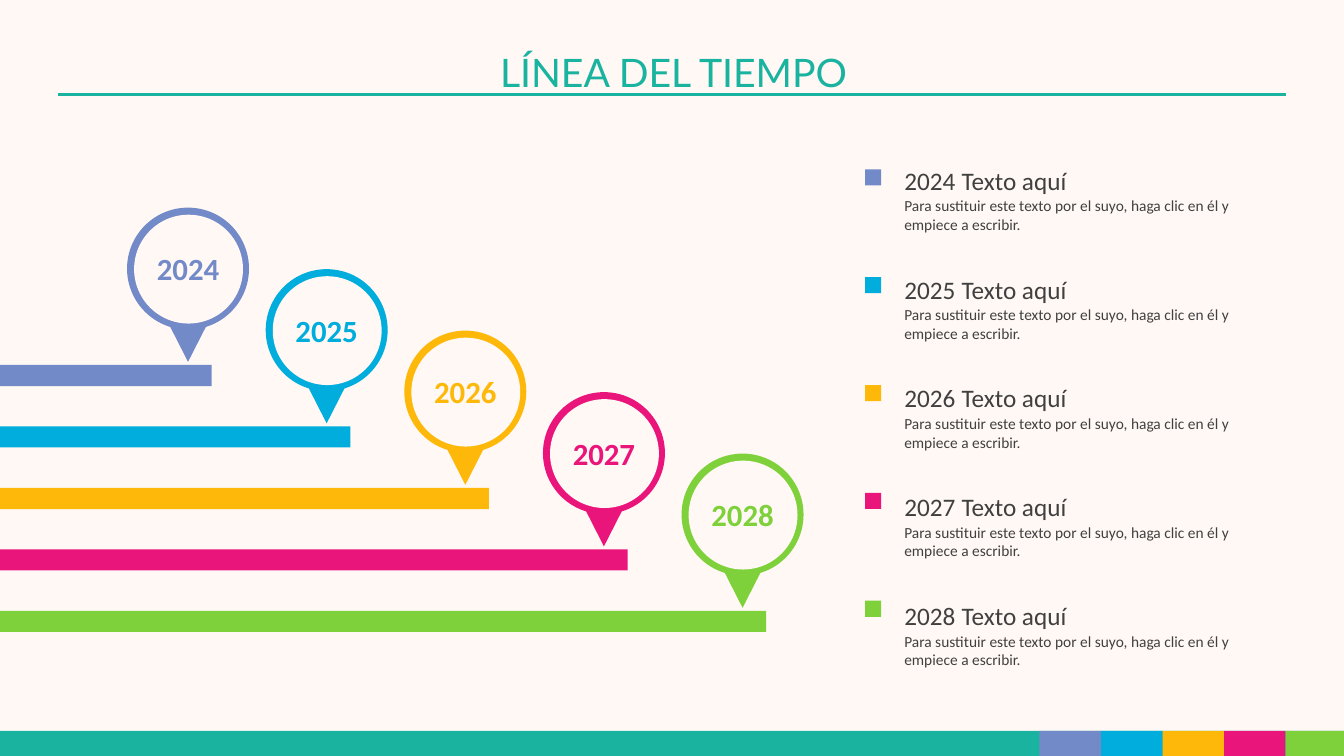
from lxml.etree import SubElement
from pptx import Presentation
from pptx.dml.color import RGBColor
from pptx.enum.shapes import MSO_CONNECTOR, MSO_SHAPE
from pptx.enum.text import MSO_ANCHOR, MSO_AUTO_SIZE, PP_ALIGN
from pptx.oxml.ns import qn
from pptx.util import Inches, Pt

BACKGROUND = "FFF8F5"
TEAL = "1AB39F"
MILESTONES = {
    "2024": "738AC8",
    "2025": "00ADDC",
    "2026": "FEB80A",
    "2027": "EA157A",
    "2028": "7FD13B",
}
DESCRIPTION = "Para sustituir este texto por el suyo, haga clic en él y empiece a escribir."
STEP_X, STEP_Y = 1.375, 0.61
HEADING = {"name": "Calibri", "size": Pt(18), "bold": False}
HEADING_GAP = {"name": "Calibri", "size": Pt(20), "bold": True}
BODY = {"name": "Calibri", "size": Pt(11)}
YEAR = {"name": "Calibri", "size": Pt(22), "bold": True}
TITLE = {"name": "Lato", "size": Pt(28), "bold": False}


def color(value):
    return RGBColor.from_string(value)


def add_block(slide, kind, left, top, width, height, fill):
    shape = slide.shapes.add_shape(
        kind, Inches(left), Inches(top), Inches(width), Inches(height))
    shape.shadow.inherit = False
    shape.fill.solid()
    shape.fill.fore_color.rgb = color(fill)
    shape.line.fill.background()
    return shape


def write_runs(frame, runs, text_color, alignment):
    """Fill the first paragraph with (text, font format) pairs."""
    frame.word_wrap = True
    paragraph = frame.paragraphs[0]
    paragraph.alignment = alignment
    for text, font_format in runs:
        run = paragraph.add_run()
        run.text = text
        for name, value in font_format.items():
            setattr(run.font, name, value)
        run.font.color.rgb = color(text_color)


def add_text(slide, left, top, width, height, runs,
             text_color="404040", alignment=PP_ALIGN.LEFT):
    box = slide.shapes.add_textbox(
        Inches(left), Inches(top), Inches(width), Inches(height))
    write_runs(box.text_frame, runs, text_color, alignment)
    box.text_frame.auto_size = MSO_AUTO_SIZE.SHAPE_TO_FIT_TEXT


def add_title(slide):
    title = slide.shapes.title
    position = {"left": 0, "top": 0.43, "width": 13.36, "height": 0.57}
    for name, value in position.items():
        setattr(title, name, Inches(value))
    frame = title.text_frame
    frame.auto_size = MSO_AUTO_SIZE.NONE
    frame.vertical_anchor = MSO_ANCHOR.TOP
    write_runs(frame, [("LÍNEA DEL TIEMPO", TITLE)], TEAL, PP_ALIGN.CENTER)

    rule = slide.shapes.add_connector(
        MSO_CONNECTOR.STRAIGHT, Inches(0.58), Inches(0.94), Inches(12.75), Inches(0.94))
    rule.line.color.rgb = color(TEAL)
    rule.line.width = Pt(2)
    SubElement(rule.element.spPr, qn("a:effectLst"))


def add_pin(slide, left, top, year, fill):
    add_block(slide, MSO_SHAPE.OVAL, left, top, 1.21, 1.21, fill)
    add_block(slide, MSO_SHAPE.FLOWCHART_MERGE, left + 0.31, top + 0.95, 0.59, 0.58, fill)
    add_block(slide, MSO_SHAPE.OVAL, left + 0.07, top + 0.07, 1.08, 1.08, BACKGROUND)
    add_text(slide, left + 0.06, top + 0.37, 1.09, 0.47,
             [(year, YEAR)], fill, PP_ALIGN.CENTER)


def add_legend_entry(slide, index, year, fill):
    add_block(slide, MSO_SHAPE.RECTANGLE, 8.58, 1.68 + 1.07 * index, 0.16, 0.16, fill)
    top = 1.56 + 1.08 * index
    heading = [(year, HEADING), (" ", HEADING_GAP), ("Texto aquí", HEADING)]
    add_text(slide, 8.87, top, 3.88, 0.4, heading)
    add_text(slide, 8.87, top + 0.34, 3.81, 0.47, [(DESCRIPTION, BODY)])


def main():
    presentation = Presentation()
    presentation.slide_width = Inches(13.33)
    presentation.slide_height = Inches(7.5)
    slide = presentation.slides.add_slide(presentation.slide_layouts[5])
    slide.background.fill.solid()
    slide.background.fill.fore_color.rgb = color(BACKGROUND)

    add_title(slide)
    add_block(slide, MSO_SHAPE.RECTANGLE, 0, 7.25, 13.33, 0.25, TEAL)
    for index, (year, fill) in enumerate(MILESTONES.items()):
        shift_x, shift_y = STEP_X * index, STEP_Y * index
        add_block(slide, MSO_SHAPE.RECTANGLE,
                  0, 3.62 + shift_y, 2.1 + shift_x, 0.21, fill)
        add_pin(slide, 1.26 + shift_x, 2.06 + shift_y, year, fill)
        add_legend_entry(slide, index, year, fill)
        strip_left = 10.31 + 0.61 * index
        strip_width = min(0.61, 13.33 - strip_left)
        add_block(slide, MSO_SHAPE.RECTANGLE, strip_left, 7.25, strip_width, 0.25, fill)

    presentation.save("out.pptx")


if __name__ == "__main__":
    main()
